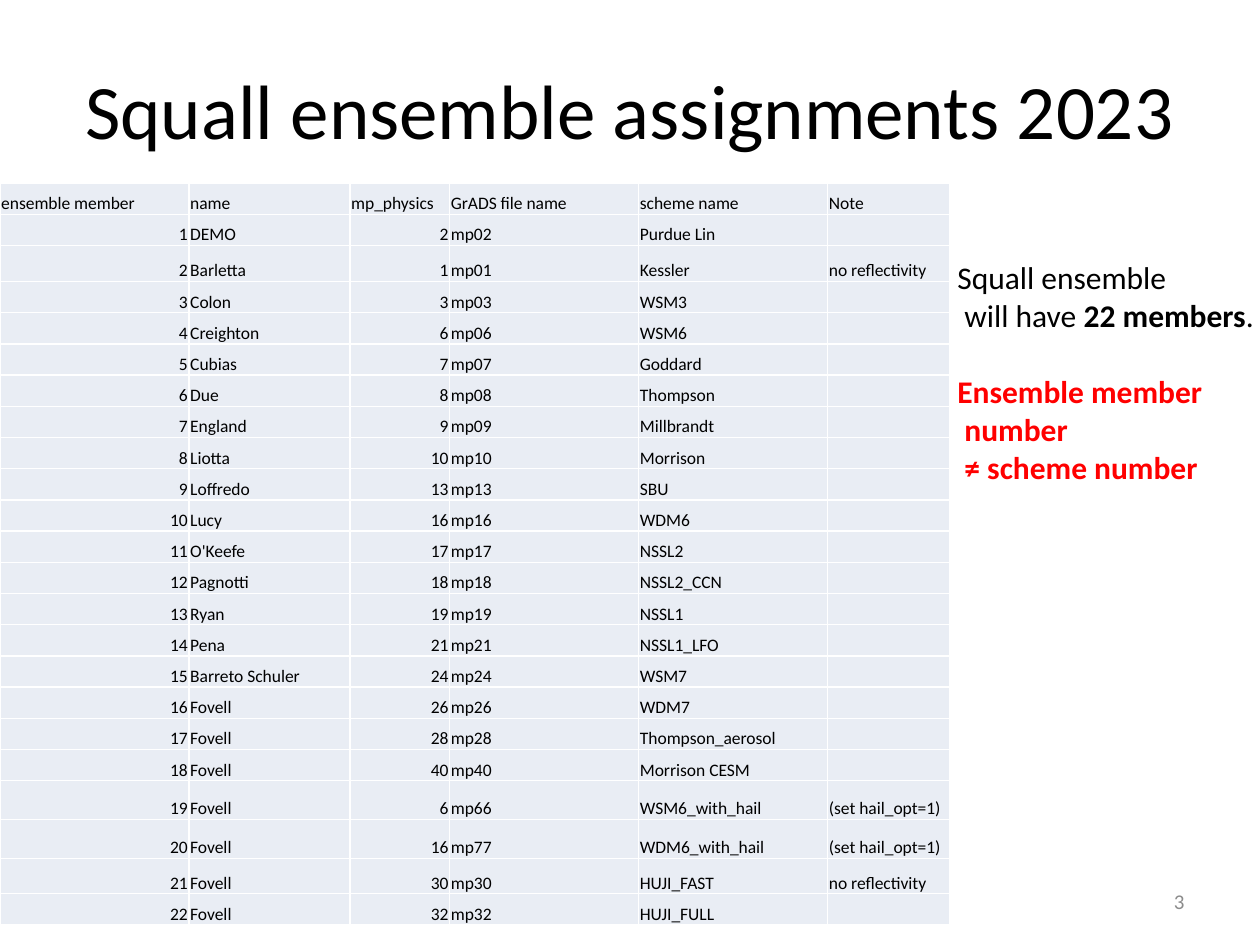
from pptx import Presentation
from pptx.dml.color import RGBColor
from pptx.enum.text import MSO_ANCHOR, MSO_AUTO_SIZE, PP_ALIGN
from pptx.util import Pt

FONT = "Calibri"
BLACK, RED, GREY, PALE = "000000", "FF0000", "8C8C8C", "E9EDF4"

HEADER = ("ensemble member", "name", "mp_physics", "GrADS file name", "scheme name", "Note")
# name, mp_physics, GrADS file name, scheme name, note; members are numbered in order
MEMBERS = [
    ("DEMO", 2, "mp02", "Purdue Lin", ""),
    ("Barletta", 1, "mp01", "Kessler", "no reflectivity"),
    ("Colon", 3, "mp03", "WSM3", ""),
    ("Creighton", 6, "mp06", "WSM6", ""),
    ("Cubias", 7, "mp07", "Goddard", ""),
    ("Due", 8, "mp08", "Thompson", ""),
    ("England", 9, "mp09", "Millbrandt", ""),
    ("Liotta", 10, "mp10", "Morrison", ""),
    ("Loffredo", 13, "mp13", "SBU", ""),
    ("Lucy", 16, "mp16", "WDM6", ""),
    ("O'Keefe", 17, "mp17", "NSSL2", ""),
    ("Pagnotti", 18, "mp18", "NSSL2_CCN", ""),
    ("Ryan", 19, "mp19", "NSSL1", ""),
    ("Pena", 21, "mp21", "NSSL1_LFO", ""),
    ("Barreto Schuler", 24, "mp24", "WSM7", ""),
    ("Fovell", 26, "mp26", "WDM7", ""),
    ("Fovell", 28, "mp28", "Thompson_aerosol", ""),
    ("Fovell", 40, "mp40", "Morrison CESM", ""),
    ("Fovell", 6, "mp66", "WSM6_with_hail", "(set hail_opt=1)"),
    ("Fovell", 16, "mp77", "WDM6_with_hail", "(set hail_opt=1)"),
    ("Fovell", 30, "mp30", "HUJI_FAST", "no reflectivity"),
    ("Fovell", 32, "mp32", "HUJI_FULL", ""),
]
COL_WIDTHS = (108, 92, 57, 108, 108, 70)
ROW_HEIGHT = 17.85
TALL_ROWS = {2: 20.6, 19: 22.2, 20: 22.2, 21: 20.2}


def rgb(color):
    return RGBColor.from_string(color)


def add_run(p, text, size, color=BLACK, bold=False):
    r = p.add_run()
    r.text = text
    r.font.name, r.font.size, r.font.bold = FONT, Pt(size), bold
    r.font.color.rgb = rgb(color)


def add_title(s, text):
    sp = s.shapes.title
    sp.left, sp.top, sp.width, sp.height = Pt(36), Pt(17.3), Pt(648), Pt(90)
    tf = sp.text_frame
    tf.vertical_anchor = MSO_ANCHOR.MIDDLE
    p = tf.paragraphs[0]
    p.alignment = PP_ALIGN.CENTER
    add_run(p, text, 44)


def add_text(s, left, top, width, height):
    tf = s.shapes.add_textbox(Pt(left), Pt(top), Pt(width), Pt(height)).text_frame
    return tf


def fill_cell(cell, value):
    cell.fill.solid()
    cell.fill.fore_color.rgb = rgb(PALE)
    cell.vertical_anchor = MSO_ANCHOR.BOTTOM
    cell.margin_left = cell.margin_right = cell.margin_top = Pt(0.72)
    cell.margin_bottom = 0
    p = cell.text_frame.paragraphs[0]
    if isinstance(value, int):
        p.alignment = PP_ALIGN.RIGHT
    if value != "":
        add_run(p, str(value), 10)
    else:
        # Keep empty cells from stretching their row
        p._p.get_or_add_endParaRPr().set("sz", "1000")


def add_member_table(s):
    rows = [HEADER] + [(n, *member) for n, member in enumerate(MEMBERS, 1)]
    heights = [TALL_ROWS.get(i, ROW_HEIGHT) for i in range(len(rows))]
    table = s.shapes.add_table(len(rows), len(HEADER), 0, Pt(104.6),
                               Pt(sum(COL_WIDTHS)), Pt(sum(heights))).table
    table.first_row = table.horz_banding = False
    for col, width in zip(table.columns, COL_WIDTHS):
        col.width = Pt(width)
    for row, height, values in zip(table.rows, heights, rows):
        row.height = Pt(height)
        for cell, value in zip(row.cells, values):
            fill_cell(cell, value)


def add_remarks(s):
    tf = add_text(s, 540, 144, 184.3, 138.2)
    tf.word_wrap = False
    tf.auto_size = MSO_AUTO_SIZE.SHAPE_TO_FIT_TEXT
    # Each line is a list of (text, colour, bold)
    lines = [
        [("Squall ensemble", BLACK, False)],
        [(" will have ", BLACK, False), ("22 members", BLACK, True), (".", BLACK, False)],
        [("Ensemble member", RED, True)],
        [(" number", RED, True)],
        [(" ≠ scheme number", RED, True)],
    ]
    for i, line in enumerate(lines):
        p = tf.paragraphs[0] if i == 0 else tf.add_paragraph()
        for text, color, bold in line:
            add_run(p, text, 18, color, bold)
    # One line of space before the warning
    tf.paragraphs[2].space_before = Pt(22)


def add_page_number(s, number):
    tf = add_text(s, 516, 500.5, 168, 28.8)
    tf.word_wrap = True
    tf.vertical_anchor = MSO_ANCHOR.MIDDLE
    p = tf.paragraphs[0]
    p.alignment = PP_ALIGN.RIGHT
    add_run(p, str(number), 12, GREY)


def main():
    prs = Presentation()
    prs.slide_width, prs.slide_height = Pt(720), Pt(540)
    s = prs.slides.add_slide(prs.slide_layouts[5])
    add_title(s, "Squall ensemble assignments 2023")
    add_page_number(s, 3)
    add_member_table(s)
    add_remarks(s)
    prs.save("out.pptx")


if __name__ == "__main__":
    main()
